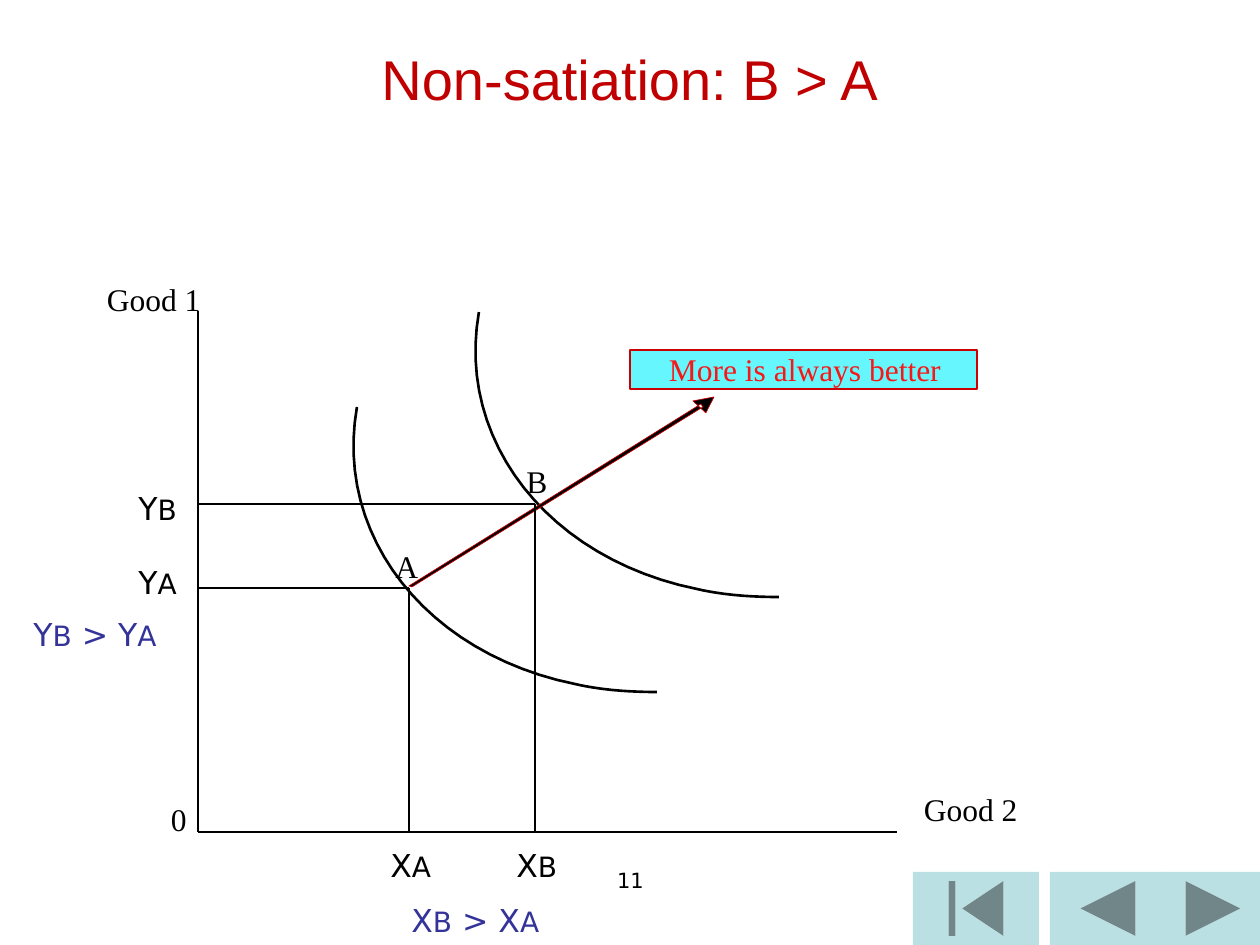
from pptx import Presentation
from pptx.dml.color import RGBColor
from pptx.enum.shapes import MSO_CONNECTOR as Link, MSO_SHAPE as Kind
from pptx.enum.text import MSO_ANCHOR as Anchor, PP_ALIGN as Align
from pptx.oxml.ns import qn
from pptx.util import Pt
from lxml import etree

SCALE = 914400 / 126
HEX = {"black": "000000", "title": "C00000", "blue": "333399", "button": "BBE0E3",
       "cyan": "66F7FE", "edge": "CC0000", "note": "FA1616"}
SERIF, SANS, HEAD = "Times New Roman", "DejaVu Sans", "Arial"


def emu(*px):
    return [round(v * SCALE) for v in px]


def tint(name):
    return RGBColor.from_string(HEX[name])


def curve(start, *parts, steps=24):
    """Return points along a chain of cubic Bezier parts."""
    pts = [start]
    for b, c, d in parts:
        a = pts[-1]
        for i in range(1, steps + 1):
            t = i / steps
            u = 1 - t
            pts.append(tuple(u**3 * p + 3 * u * u * t * q + 3 * u * t * t * r + t**3 * s
                             for p, q, r, s in zip(a, b, c, d)))
    return pts


class Board:
    def __init__(self, slide):
        self.shapes = slide.shapes

    def paint(self, shape, fill=None, line=None, width=0.75):
        shape.shadow.inherit = False
        if fill:
            shape.fill.solid()
            shape.fill.fore_color.rgb = tint(fill)
        else:
            shape.fill.background()
        if line:
            shape.line.color.rgb = tint(line)
            shape.line.width = Pt(width)
        else:
            shape.line.fill.background()

    def letter(self, shape, parts, font, color="black", sizes=(18, 16), align=Align.LEFT):
        """Fill a shape with runs whose sizes alternate."""
        frame = shape.text_frame
        frame.word_wrap = True
        para = frame.paragraphs[0]
        para.alignment = align
        para.text = parts[0]
        for part in parts[1:]:
            para.add_run().text = part
        for i, run in enumerate(para.runs):
            run.font.name = font
            run.font.size = Pt(sizes[i % len(sizes)])
            run.font.color.rgb = tint(color)
        return frame

    def label(self, box, *parts, font=SERIF, inset=True, **style):
        frame = self.letter(self.shapes.add_textbox(*emu(*box)), parts, font, **style)
        if not inset:
            self.trim(frame)
        return frame

    def trim(self, frame, left=0):
        frame.margin_left = emu(left)[0]
        frame.margin_right = frame.margin_top = frame.margin_bottom = 0

    def button(self, kind, box):
        self.paint(self.shapes.add_shape(kind, *emu(*box)), "button")

    def banner(self, box, text, left):
        rect = self.shapes.add_shape(Kind.RECTANGLE, *emu(*box))
        self.paint(rect, "cyan", "edge")
        frame = self.letter(rect, [text], SERIF, "note")
        frame.vertical_anchor = Anchor.TOP
        self.trim(frame, left)

    def line(self, start, end, width=0.75):
        link = self.shapes.add_connector(Link.STRAIGHT, *emu(*start, *end))
        link.line.color.rgb = tint("black")
        link.line.width = Pt(width)
        props = link._element.find(qn("p:spPr"))
        etree.SubElement(props, qn("a:effectLst"))

    def outline(self, *paths, close=False, **look):
        first, *rest = [[emu(*pt) for pt in path] for path in paths]
        form = self.shapes.build_freeform(*first[0], scale=1.0)
        form.add_line_segments(first[1:], close=close)
        for path in rest:
            form.move_to(*path[0])
            form.add_line_segments(path[1:], close=close)
        self.paint(form.convert_to_shape(), **look)


def main():
    deck = Presentation()
    deck.slide_width, deck.slide_height = emu(1260, 945)
    board = Board(deck.slides.add_slide(deck.slide_layouts[6]))

    for kind, x, w in ((Kind.ACTION_BUTTON_BACK_OR_PREVIOUS, 1050, 116),
                       (Kind.ACTION_BUTTON_BEGINNING, 913, 126),
                       (Kind.ACTION_BUTTON_FORWARD_OR_NEXT, 1166, 94)):
        board.button(kind, (x, 872, w, 73))

    title = board.label((0, 0, 1260, 157), "Non-satiation: B > A", font=HEAD,
                        color="title", sizes=[32], align=Align.CENTER)
    title.vertical_anchor = Anchor.MIDDLE
    board.label((431, 861, 399, 66), "11", font=SANS, sizes=[12], align=Align.CENTER)

    board.label((383, 541, 52, 50), "A")
    board.label((514, 456, 66, 50), "B")
    for x, y, text in ((107, 280, "Good 1"), (171, 800, "0"), (924, 790, "Good 2")):
        board.label((x, y, 116, 38), text, inset=False)
    board.banner((630, 350, 347, 39), "More is always better", left=39)

    left, base = 198, 832
    board.line((left, 311), (left, base), 1.5)
    board.line((left, base), (897, base), 1.5)

    low = curve((657, 692), ((629, 692), (601, 690), (575, 684)),
                ((427, 654), (334, 536), (357, 407)))
    for dx, dy in ((0, 0), (122, -95)):
        board.outline([(x + dx, y + dy) for x, y in low], line="black", width=1.5)
    board.outline([(409, 586), (701, 404), (703, 407), (412, 587)],
                  [(693, 401), (714, 397), (706, 413)],
                  close=True, fill="black", line="edge", width=0.38)

    for name, x, y, top in (("A", 409, 588, 557), ("B", 535, 504, 483)):
        board.line((x, y), (x, base - 1))
        board.line((x, y), (left + 1, y))
        board.label((x - 31, 840, 72, 50), "X", name, font=SANS)
        board.label((126, top, 73, 50), "Y", name, font=SANS)

    for axis, x, y in (("X", 399, 895), ("Y", 21, 609)):
        board.label((x, y, 198, 50), axis, "B", f" > {axis}", "A", font=SANS, color="blue")

    deck.save("out.pptx")


if __name__ == "__main__":
    main()
